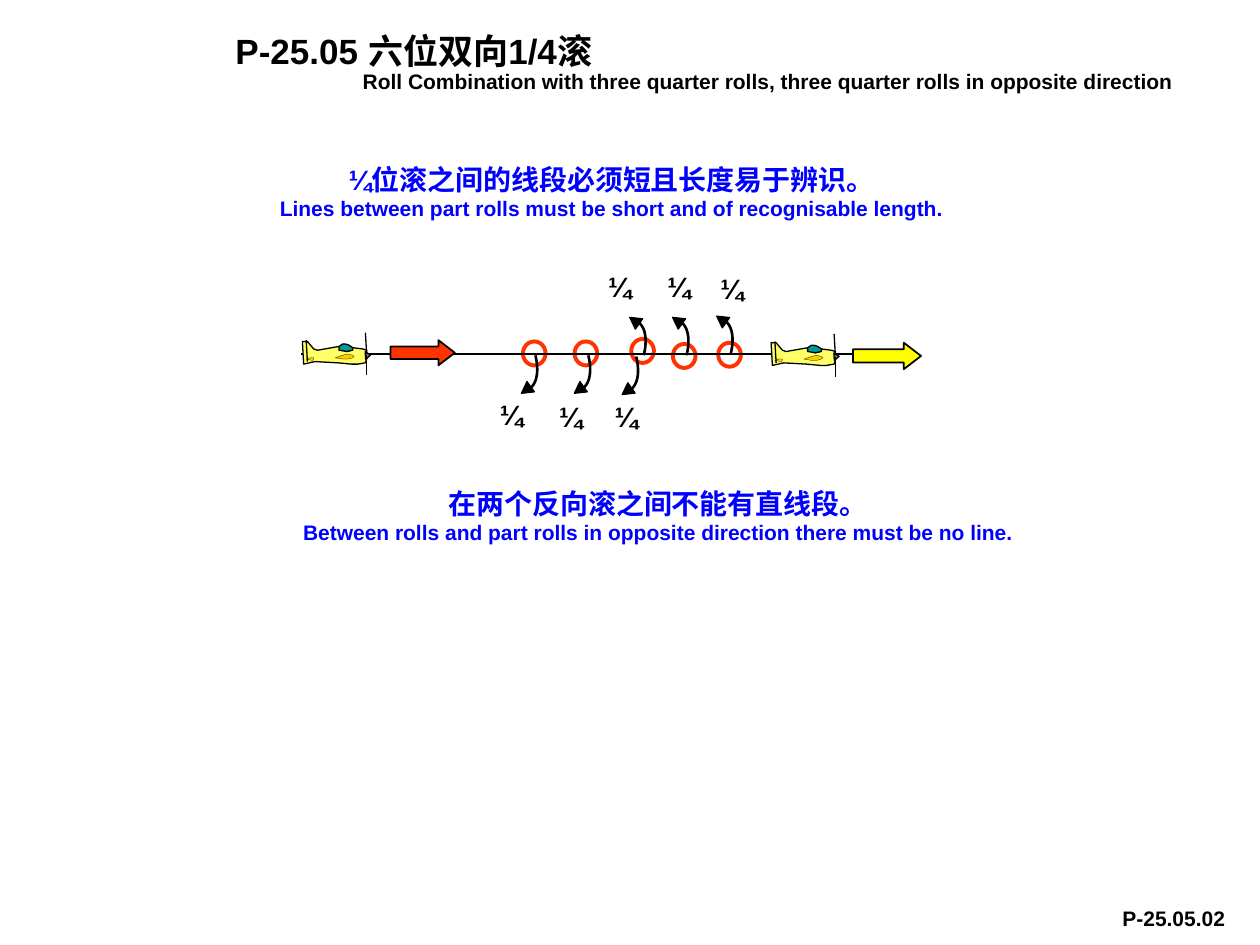
from lxml.etree import SubElement
from pptx import Presentation
from pptx.dml.color import RGBColor
from pptx.enum.shapes import MSO_CONNECTOR as Link, MSO_SHAPE as Kind
from pptx.enum.text import PP_ALIGN as Align
from pptx.oxml.ns import qn
from pptx.util import Inches, Pt

BLACK = RGBColor(0, 0, 0)
BLUE = RGBColor(0, 0, 255)
RED = RGBColor(255, 51, 0)
YELLOW = RGBColor(255, 255, 0)
CREAM = RGBColor(255, 255, 102)
TEAL = RGBColor(0, 153, 153)
GOLD = RGBColor(255, 204, 0)
GREY = RGBColor(128, 128, 128)

# The slide is a grid of 1000 columns by 750 rows
COLS, ROWS = 1000, 750
CELL = Inches(10) / COLS

# Texts: box, colour, alignment, wrap, lines of (text, size, indent)
TEXTS = [
    ((177, 22, 798, 57), BLACK, Align.LEFT, True,
     [("P-25.05 六位双向1/4滚", 20, 0),
      ("Roll Combination with three quarter rolls, three quarter rolls"
       " in opposite direction", 12, 101)]),
    ((190, 124, 591, 57), BLUE, Align.CENTER, True,
     [("¼位滚之间的线段必须短且长度易于辨识。", 16, 0),
      ("Lines between part rolls must be short and of recognisable length.",
       12, 0)]),
    ((214, 381, 617, 57), BLUE, Align.CENTER, True,
     [("在两个反向滚之间不能有直线段。", 16, 0),
      ("Between rolls and part rolls in opposite direction there must be"
       " no line.", 12, 0)]),
    ((881, 714, 103, 30), BLACK, Align.LEFT, False, [("P-25.05.02", 12, 0)]),
]
TITLE = TEXTS[0]

# Quarter rolls: label centre and top, arrow start, way (-1 up, 1 down)
ROLLS = [
    ((406, 311), (425, 282), 1), ((453, 312), (467, 282), 1),
    ((497, 312), (505, 283), 1), ((492, 209), (511, 282), -1),
    ((539, 209), (545, 282), -1), ((581, 211), (580, 281), -1),
]
LABEL = (127, 64)
CURVE = [(0, 0), (3, 13), (1, 22), (-4, 26)]
HEAD = (-7.5, 27.5)
STEPS = 12

# Rings on the flight line: left, top
RINGS = [(415, 271), (456, 271), (501, 269), (534, 273), (570, 272)]
FLIGHT = [(712, 281), (239, 281)]

# Block arrows: box, head length, fill
ARROWS = [((310, 270, 51, 20), 0.65, RED), ((677, 272, 54, 21), 0.65, YELLOW)]

# Planes: left and top, then parts measured from there
PLANES = [(240, 264), (612, 265)]
PARTS = [
    (CREAM, 0.75, [(40, 12), (48, 13), (51, 14), (51, 21), (50, 24), (44, 25),
                   (39, 25), (28, 24), (10, 23), (1, 25), (0, 7), (4, 7),
                   (9, 13), (12, 14), (29, 11), (30, 13), (35, 15), (39, 14)]),
    (TEAL, 0.75, [(29, 11), (29, 14), (35, 15), (40, 14), (40, 12), (37, 10),
                  (34, 9), (32, 9)]),
    (GOLD, 0.13, [(26, 20), (32, 18), (36, 17), (40, 18), (41, 19), (40, 20),
                  (36, 21), (32, 21)]),
    (GOLD, 0.13, [(3, 21), (6, 20), (9, 20), (9, 21), (8, 22)]),
]
SPIN = (49, 16, 6, 4)
STRUTS = [[(4, 23), (3, 6)], [(51, 34), (51, 18)], [(51, 17), (50, 0)]]


def grid(*vals):
    return [round(v * CELL) for v in vals]


def move(pts, dx, dy):
    return [(x + dx, y + dy) for x, y in pts]


def paint(shape, fill, line, width):
    shape.shadow.inherit = False
    if fill is None:
        shape.fill.background()
    else:
        shape.fill.solid()
        shape.fill.fore_color.rgb = fill
    shape.line.color.rgb = line
    shape.line.width = Pt(width)
    return shape


def add(home, kind, box, fill, width, line=BLACK, turn=0):
    shape = home.add_shape(kind, *grid(*box))
    shape.rotation = turn
    return paint(shape, fill, line, width)


def trace(home, pts, fill, width, close=True):
    first, *rest = [grid(*p) for p in pts]
    path = home.build_freeform(*first)
    path.add_line_segments(rest, close=close)
    return paint(path.convert_to_shape(), fill, BLACK, width)


def rule(home, ends, width):
    line = home.add_connector(Link.STRAIGHT, *grid(*ends[0], *ends[1]))
    line.line.color.rgb = BLACK
    line.line.width = Pt(width)
    SubElement(line._element.spPr, qn("a:effectLst"))


def write(home, box, color, align, wrap, lines, lead=None):
    frame = home.add_textbox(*grid(*box)).text_frame
    frame.word_wrap = wrap
    for i, (text, size, indent) in enumerate(lines):
        para = frame.add_paragraph() if i else frame.paragraphs[0]
        para.alignment, para.line_spacing = align, lead
        if indent:
            para._p.get_or_add_pPr().set("marL", str(*grid(indent)))
        run = para.add_run()
        run.text = text
        look = {"name": "Arial", "size": Pt(size), "bold": True}
        for key, val in look.items():
            setattr(run.font, key, val)
        run.font.color.rgb = color


def bend(start, way):
    pts = []
    for i in range(STEPS + 1):
        t = i / STEPS
        mix = ((1 - t) ** 3, 3 * t * (1 - t) ** 2, 3 * t * t * (1 - t), t ** 3)
        dx = sum(m * p[0] for m, p in zip(mix, CURVE))
        dy = sum(m * p[1] for m, p in zip(mix, CURVE))
        pts.append((start[0] + dx, start[1] + way * dy))
    return pts


def plane(home, left, top):
    group = home.add_group_shape().shapes
    for fill, width, pts in PARTS:
        trace(group, move(pts, left, top), fill, width)
    x, y, w, h = SPIN
    add(group, Kind.ISOSCELES_TRIANGLE, (left + x, top + y, w, h), GREY, 0.75,
        turn=87)
    for ends in STRUTS:
        rule(group, move(ends, left, top), 0.75)


def roll(home, start, way):
    group = home.add_group_shape().shapes
    trace(group, bend(start, way), None, 1.5, close=False)
    x, y = start[0] + HEAD[0], start[1] + way * HEAD[1]
    add(group, Kind.ISOSCELES_TRIANGLE, (x - 5, y - 4.5, 10, 9), BLACK, 0.75,
        turn=270 - way * 35.5)


deck = Presentation()
deck.slide_width, deck.slide_height = grid(COLS, ROWS)
shapes = deck.slides.add_slide(deck.slide_layouts[6]).shapes

# Rings and flight line
for left, top in RINGS:
    add(shapes, Kind.OVAL, (left, top, 18, 19), None, 2.25, RED)
rule(shapes, FLIGHT, 1)

# Planes and block arrows
for spot in PLANES:
    plane(shapes, *spot)
for box, tip, fill in ARROWS:
    arrow = add(shapes, Kind.RIGHT_ARROW, box, fill, 1)
    arrow.adjustments[1] = tip

# Quarter rolls with their labels
for (mid, top), start, way in ROLLS:
    roll(shapes, start, way)
    write(shapes, (mid - LABEL[0] / 2, top, *LABEL), BLACK, Align.CENTER, True,
          [("¼", 16, 0)])

# Title, notes on the rolls and page code
for item in TEXTS:
    write(shapes, *item, lead=0.9 if item is TITLE else None)

deck.save("out.pptx")
